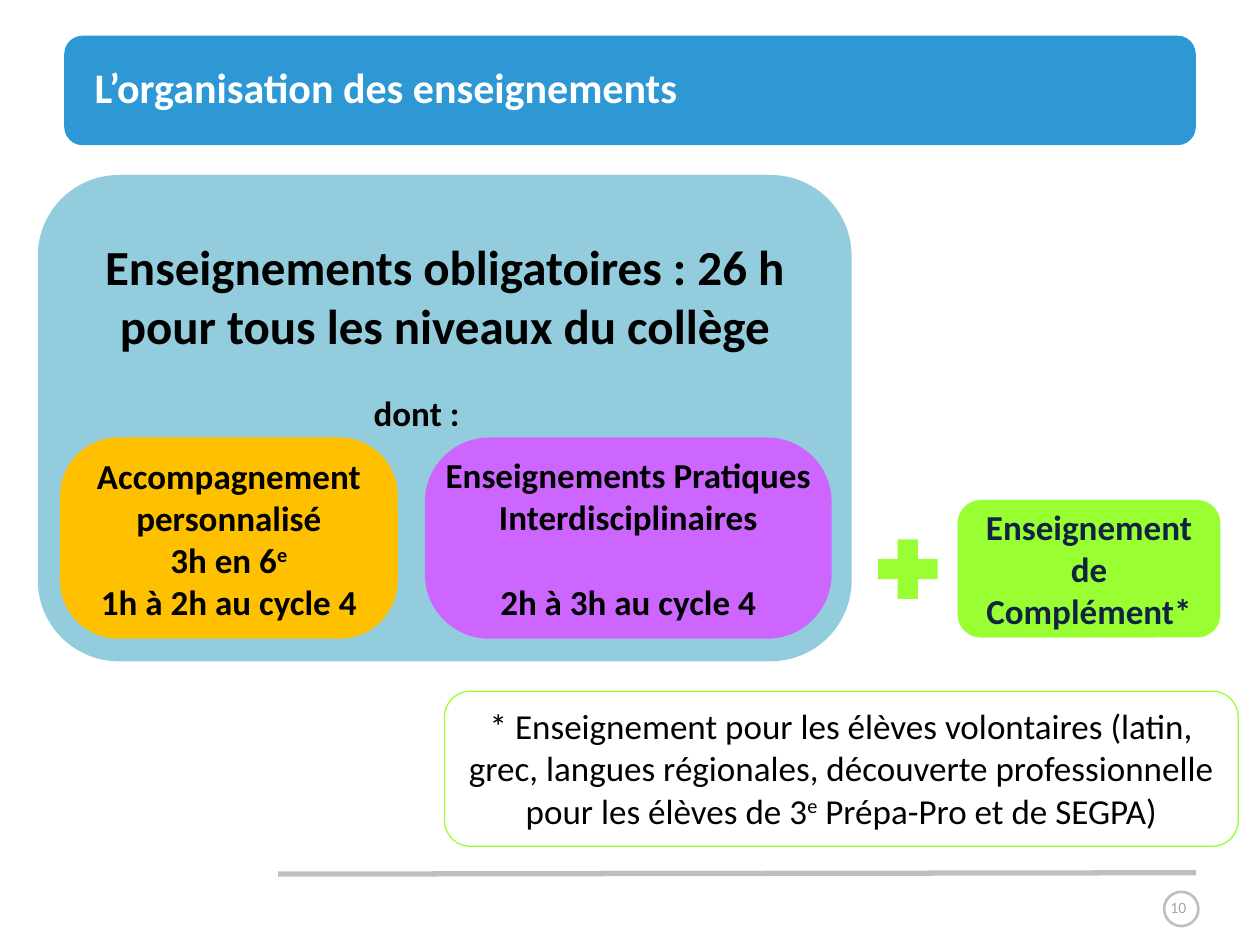
import pptx
import pptx.util
import pptx.dml.color
import pptx.enum.shapes
import pptx.enum.text
import pptx.oxml.ns
import lxml.etree

Pt = pptx.util.Pt
Shapes = pptx.enum.shapes.MSO_SHAPE
Align = pptx.enum.text.PP_ALIGN
Anchor = pptx.enum.text.MSO_ANCHOR

BLACK, WHITE, NAVY = "000000", "FFFFFF", "0F243E"
BLUE, PALE_BLUE, PURPLE, ORANGE, GREEN = "2E98D5", "93CDDD", "CC66FF", "FFC000", "99FF33"
GREY, DARK_GREY = "BFBFBF", "A6A6A6"

TITLE = "L’organisation des enseignements"
PAGE_NUMBER = "10"
REQUIRED = ["Enseignements obligatoires : 26 h", "pour tous les niveaux du collège", "dont :"]
FOOTNOTE = [["* Enseignement pour les élèves volontaires (latin, grec, langues régionales, "
             "découverte professionnelle pour les élèves de 3", "e", " Prépa-Pro et de SEGPA)"]]
CARDS = [
    {"box": (242.8, 250, 232.4, 115), "fill": PURPLE, "corner": 0.32, "color": BLACK,
     "lines": ["Enseignements Pratiques", "Interdisciplinaires", "2h à 3h au cycle 4"], "gap": 24.4},
    {"box": (34.3, 250, 193, 115), "fill": ORANGE, "corner": 0.29, "color": BLACK,
     "lines": ["Accompagnement", "personnalisé", ["3h en 6", "e"], "1h à 2h au cycle 4"], "gap": 0},
    {"box": (547.2, 285.7, 150.2, 78.6), "fill": GREEN, "corner": 0.17, "color": NAVY,
     "lines": ["Enseignement", "de", "Complément*"], "gap": 0},
]


def rgb(value):
    return pptx.dml.color.RGBColor.from_string(value)


def place(shape, box):
    shape.left, shape.top, shape.width, shape.height = map(Pt, box)


def add_shape(slide, kind, box, fill=None, line=None, line_width=0.75, corner=None):
    shape = slide.shapes.add_shape(kind, *map(Pt, box))
    shape.shadow.inherit = False
    if fill:
        shape.fill.solid()
        shape.fill.fore_color.rgb = rgb(fill)
    else:
        shape.fill.background()
    if line:
        shape.line.color.rgb = rgb(line)
        shape.line.width = Pt(line_width)
    else:
        shape.line.fill.background()
    if corner is not None:
        shape.adjustments[0] = corner
    return shape


def write(shape, lines, size, color, bold=False, align=Align.CENTER, anchor=Anchor.MIDDLE, wrap=True):
    frame = shape.text_frame
    frame.word_wrap = wrap
    frame.vertical_anchor = anchor
    for index, line in enumerate(lines):
        paragraph = frame.add_paragraph() if index else frame.paragraphs[0]
        paragraph.alignment = align
        for part in [line] if isinstance(line, str) else line:
            run = paragraph.add_run()
            run.text = part
            run.font.name = "Calibri"
            run.font.size = Pt(size)
            run.font.bold = bold
            run.font.color.rgb = rgb(color)
            if part == "e":
                run._r.get_or_add_rPr().set("baseline", "30000")
    return frame.paragraphs


def add_title(slide):
    title = slide.shapes.title
    bar = add_shape(slide, Shapes.ROUNDED_RECTANGLE, (36.7, 20.4, 646.6, 62.6), BLUE)
    title.element.addprevious(bar.element)
    place(title, (54, 13, 629.3, 73.4))
    frame = title.text_frame
    frame.auto_size = pptx.enum.text.MSO_AUTO_SIZE.NONE
    frame.margin_left = frame.margin_right = frame.margin_top = frame.margin_bottom = 0
    write(title, [TITLE], 24, WHITE, bold=True, align=Align.LEFT)


def add_footer(slide):
    rule = slide.shapes.add_connector(pptx.enum.shapes.MSO_CONNECTOR.STRAIGHT,
                                      Pt(159), Pt(499.5), Pt(683.5), Pt(498.7))
    rule.line.color.rgb = rgb(GREY)
    rule.line.width = Pt(3)
    lxml.etree.SubElement(rule.element.spPr, pptx.oxml.ns.qn("a:effectLst"))
    add_shape(slide, Shapes.OVAL, (665.2, 509.6, 19.6, 19.6), line=GREY, line_width=1.5)
    number = slide.shapes.add_textbox(*map(Pt, (647.5, 508.5, 51.8, 19.4)))
    write(number, [PAGE_NUMBER], 9, DARK_GREY)


def add_required(slide):
    box = add_shape(slide, Shapes.ROUNDED_RECTANGLE, (21.6, 100, 465.1, 277.9), PALE_BLUE)
    box.text_frame.margin_top = Pt(21.5)
    *headings, intro = write(box, REQUIRED, 28, BLACK, bold=True, anchor=Anchor.TOP)
    intro.alignment = Align.LEFT
    intro.space_before = Pt(21.6)
    intro.runs[0].font.size = Pt(20)
    intro._p.get_or_add_pPr().set("marL", str(Pt(171.3)))


def main():
    presentation = pptx.Presentation()
    presentation.slide_width, presentation.slide_height = Pt(720), Pt(540)
    slide = presentation.slides.add_slide(presentation.slide_layouts[5])
    add_title(slide)
    add_footer(slide)
    add_required(slide)
    for card in CARDS:
        shape = add_shape(slide, Shapes.ROUNDED_RECTANGLE, card["box"], card["fill"], corner=card["corner"])
        paragraphs = write(shape, card["lines"], 20, card["color"], bold=True, wrap=False)
        paragraphs[-1].space_before = Pt(card["gap"])
    add_shape(slide, Shapes.CROSS, (501.8, 308.2, 34, 34), GREEN, corner=0.33)
    note = add_shape(slide, Shapes.ROUNDED_RECTANGLE, (254, 395, 453.6, 88.6), line=GREEN)
    write(note, FOOTNOTE, 20, BLACK, anchor=Anchor.TOP)
    presentation.save("out.pptx")


if __name__ == "__main__":
    main()
